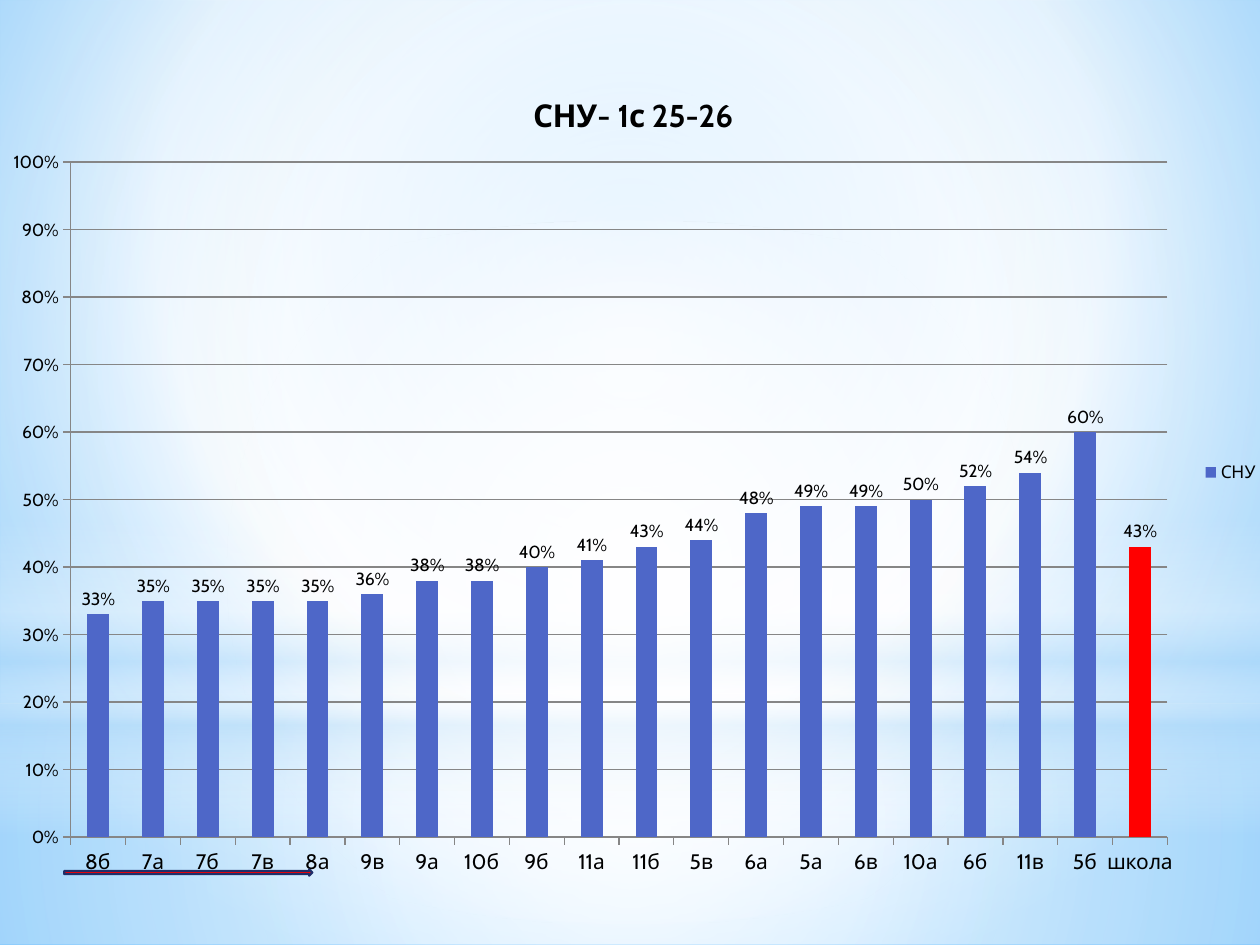
from dataclasses import dataclass

from lxml import etree
from pptx import Presentation
from pptx import util as u
from pptx.chart import data as chart_data
from pptx.dml.color import RGBColor
from pptx.enum import chart as ch
from pptx.enum import shapes as sh
from pptx.oxml import ns, parse_xml

COLORS = {
    "white": "FFFFFF",
    "pale": "B4DCFA",
    "sky": "9ED5FF",
    "deep_sky": "5BB9FF",
    "bar": "4E67C8",
    "school": "FF0000",
    "arrow_line": "1F2E69",
    "text": "000000",
    "grid": "868686",
}
FONT = "Cabin"
CENTRE = (50, 50, 50, 50)

AVERAGES = {
    "8б": 0.33, "7а": 0.35, "7б": 0.35, "7в": 0.35, "8а": 0.35,
    "9в": 0.36, "9а": 0.38, "10б": 0.38, "9б": 0.4, "11а": 0.41,
    "11б": 0.43, "5в": 0.44, "6а": 0.48, "5а": 0.49, "6в": 0.49,
    "10а": 0.5, "6б": 0.52, "11в": 0.54, "5б": 0.6, "школа": 0.43,
}


@dataclass
class Gradient:
    """Stops are (position %, colour name, opacity %); no focus means vertical."""
    stops: list[tuple[int, str, int]]
    focus: tuple[int, int, int, int] | None = None


@dataclass
class Glow:
    kind: sh.MSO_SHAPE
    top: float
    height: float
    gradient: Gradient


BACKGROUND = Gradient(
    [(0, "sky", 100), (60, "white", 100), (100, "deep_sky", 100)], (20, 10, 20, 60))

GLOWS = [
    Glow(sh.MSO_SHAPE.RECTANGLE, 402, 138, Gradient(
        [(0, "white", 91), (37, "white", 76), (100, "pale", 79)], CENTRE)),
    Glow(sh.MSO_SHAPE.RECTANGLE, 0, 402, Gradient(
        [(0, "white", 89), (48, "white", 62), (100, "pale", 79)], CENTRE)),
    Glow(sh.MSO_SHAPE.RECTANGLE, 297, 180, Gradient(
        [(0, "white", 0), (29, "white", 30), (45, "pale", 40),
         (55, "white", 26), (65, "pale", 60), (100, "white", 0)])),
    Glow(sh.MSO_SHAPE.OVAL, 126, 402, Gradient(
        [(0, "white", 100), (56, "white", 0)], CENTRE)),
]


def rgb(name: str) -> RGBColor:
    return RGBColor.from_string(COLORS[name])


def apply_gradient(element: etree.ElementBase, gradient: Gradient) -> None:
    """Replace the solid fill inside the element with the gradient."""
    stops = "".join(
        f'<a:gs pos="{position * 1000}"><a:srgbClr val="{COLORS[color]}">'
        f'<a:alpha val="{opacity * 1000}"/></a:srgbClr></a:gs>'
        for position, color, opacity in gradient.stops)
    if gradient.focus:
        left, top, right, bottom = (side * 1000 for side in gradient.focus)
        direction = (f'<a:path path="circle"><a:fillToRect l="{left}" t="{top}" '
                     f'r="{right}" b="{bottom}"/></a:path>')
    else:
        direction = '<a:lin ang="5400000" scaled="0"/>'
    fill = parse_xml(f'<a:gradFill {ns.nsdecls("a")} rotWithShape="1">'
                     f'<a:gsLst>{stops}</a:gsLst>{direction}</a:gradFill>')
    solid = element.find(".//" + ns.qn("a:solidFill"))
    solid.getparent().replace(solid, fill)


def add_glow(slide, glow: Glow) -> None:
    shape = slide.shapes.add_shape(
        glow.kind, 0, u.Pt(glow.top), u.Pt(720), u.Pt(glow.height))
    shape.shadow.inherit = False
    shape.line.fill.background()
    shape.fill.solid()
    apply_gradient(shape._element, glow.gradient)


def set_layout(element: etree.ElementBase, index: int, **fractions: float) -> None:
    """Place a chart part by fractions of the chart's size."""
    for layout in element.findall(ns.qn("c:layout")):
        element.remove(layout)
    target = '<c:layoutTarget val="inner"/>' if "w" in fractions else ""
    values = "".join(f'<c:{key} val="{value}"/>' for key, value in fractions.items())
    element.insert(index, parse_xml(
        f'<c:layout {ns.nsdecls("c")}><c:manualLayout>{target}<c:xMode val="edge"/>'
        f'<c:yMode val="edge"/>{values}</c:manualLayout></c:layout>'))


def format_font(font, size: float, bold: bool = False) -> None:
    font.name = FONT
    font.size = u.Pt(size)
    font.bold = bold
    font.color.rgb = rgb("text")


def format_axis(axis, size: float) -> None:
    format_font(axis.tick_labels.font, size)
    axis.major_tick_mark = ch.XL_TICK_MARK.OUTSIDE
    axis.minor_tick_mark = ch.XL_TICK_MARK.NONE
    axis.format.line.color.rgb = rgb("grid")
    axis.format.line.width = u.Pt(0.75)


def add_averages_chart(slide) -> None:
    data = chart_data.CategoryChartData(number_format="0%")
    data.categories = list(AVERAGES)
    data.add_series("СНУ", list(AVERAGES.values()))
    chart = slide.shapes.add_chart(
        ch.XL_CHART_TYPE.COLUMN_CLUSTERED,
        u.Pt(-6.5), u.Pt(31), u.Pt(733), u.Pt(478), data).chart
    format_font(chart.font, 10)

    chart.has_title = True
    title = chart.chart_title
    title.text_frame.text = "СНУ- 1с 25-26"
    format_font(title.text_frame.paragraphs[0].runs[0].font, 18, bold=True)
    title.include_in_layout = False
    set_layout(title._element, 1, x=0.42, y=0.04)

    chart.has_legend = True
    chart.legend.position = ch.XL_LEGEND_POSITION.RIGHT
    chart.legend.include_in_layout = False
    format_font(chart.legend.font, 10)

    format_axis(chart.category_axis, 12)
    value_axis = chart.value_axis
    format_axis(value_axis, 10)
    value_axis.minimum_scale, value_axis.maximum_scale = 0, 1
    value_axis.major_unit = 0.1
    value_axis.tick_labels.number_format = "0%"
    value_axis.tick_labels.number_format_is_linked = False
    value_axis.has_major_gridlines = True
    value_axis.major_gridlines.format.line.color.rgb = rgb("grid")
    value_axis.major_gridlines.format.line.width = u.Pt(0.75)

    plot = chart.plots[0]
    plot.gap_width = 150
    plot.vary_by_categories = False
    series = plot.series[0]
    bars = {"bar": series.format, "school": series.points[len(AVERAGES) - 1].format}
    for color, bar_format in bars.items():
        bar_format.fill.solid()
        bar_format.fill.fore_color.rgb = rgb(color)
    labels = series.data_labels
    labels.show_value = True
    labels.number_format = "0%"
    labels.number_format_is_linked = False
    labels.position = ch.XL_LABEL_POSITION.OUTSIDE_END
    format_font(labels.font, 10)
    plot_area = chart._chartSpace.find(".//" + ns.qn("c:plotArea"))
    set_layout(plot_area, 0, x=0.064, y=0.129, w=0.855, h=0.807)


def add_arrow(slide) -> None:
    arrow = slide.shapes.add_shape(
        sh.MSO_SHAPE.RIGHT_ARROW, u.Pt(36.7), u.Pt(496.8), u.Pt(141.8), u.Pt(3.6))
    arrow.shadow.inherit = False
    arrow.fill.solid()
    arrow.fill.fore_color.rgb = rgb("school")
    arrow.line.color.rgb = rgb("arrow_line")
    arrow.line.width = u.Pt(1.25)


def main() -> None:
    presentation = Presentation()
    presentation.slide_width, presentation.slide_height = u.Pt(720), u.Pt(540)
    slide = presentation.slides.add_slide(presentation.slide_layouts[6])
    slide.background.fill.solid()
    apply_gradient(slide._element, BACKGROUND)
    for glow in GLOWS:
        add_glow(slide, glow)
    add_averages_chart(slide)
    add_arrow(slide)
    presentation.save("out.pptx")


if __name__ == "__main__":
    main()
